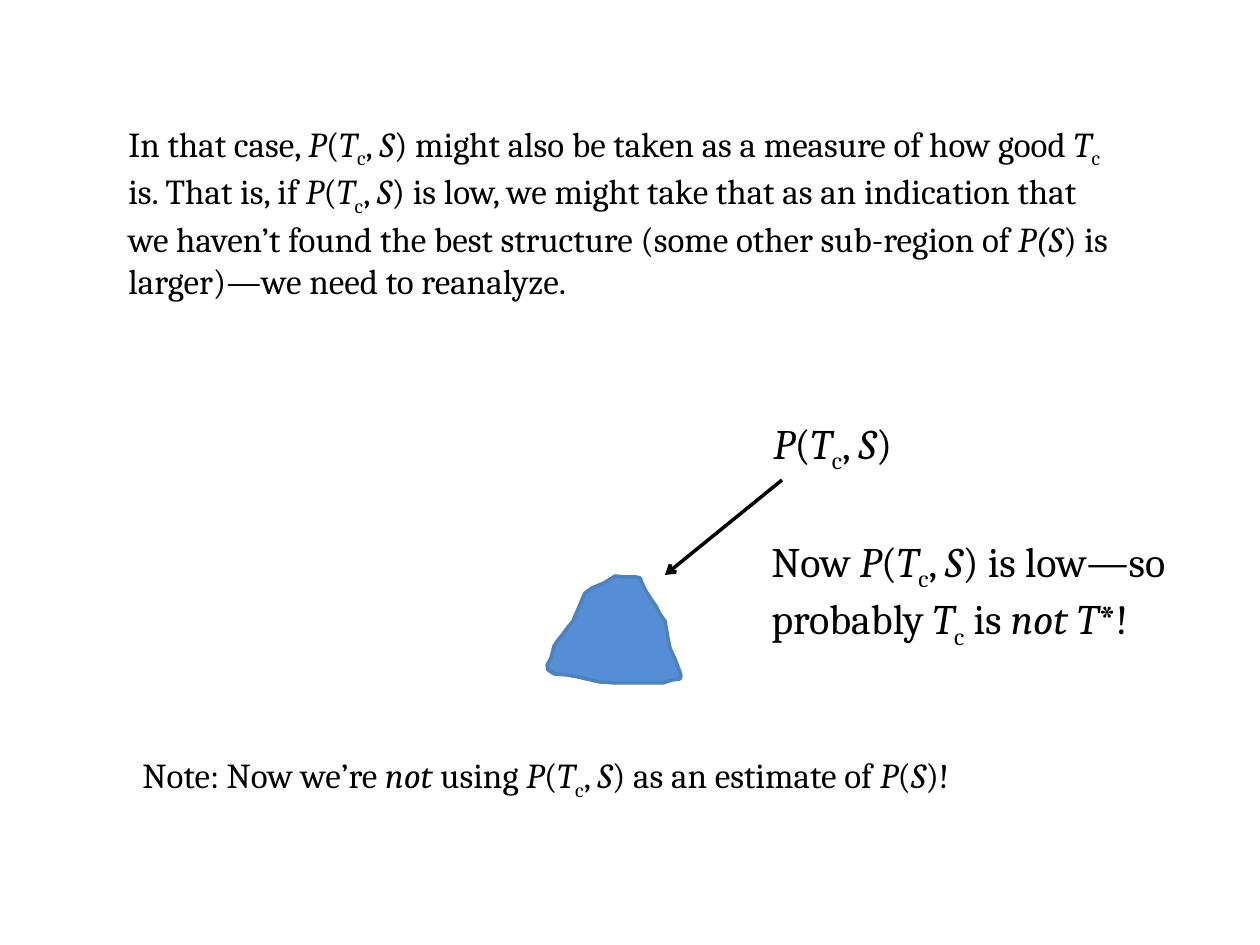
from dataclasses import dataclass

from lxml import etree
from pptx import Presentation
from pptx.dml.color import RGBColor
from pptx.enum.shapes import MSO_CONNECTOR
from pptx.enum.text import MSO_AUTO_SIZE
from pptx.oxml.ns import qn
from pptx.util import Emu, Inches, Pt

STRAIGHT = MSO_CONNECTOR.STRAIGHT
GROW = MSO_AUTO_SIZE.SHAPE_TO_FIT_TEXT
SCALE = 914400 / 126  # EMU in one px
FONT = "Cambria"
BLACK, BLUE, EDGE = "000000", "558ED5", "4F81BD"

# In the texts, ~ switches italics and _ switches subscript
TC = "~T~_c_"
JOINT = f"~P~({TC}, ~S~)"


@dataclass
class Note:
    left: int
    top: int
    width: int
    height: int
    size: int
    wrap: bool
    lines: list[str]


NOTES = [
    Note(116, 116, 1018, 183, 20, True, [
        f"In that case, {JOINT} might also be taken as a measure of how good {TC} is. "
        f"That is, if {JOINT} is low, we might take that as an indication that "
        "we haven’t found the best structure (some other sub-region of ~P(S~) is "
        "larger)—we need to reanalyze."]),
    Note(759, 529, 452, 115, 24, False, [
        f"Now {JOINT} is low—so", f"probably {TC} is ~not T~*!"]),
    Note(761, 411, 171, 63, 24, False, [JOINT]),
    Note(130, 747, 1012, 55, 20, True, [
        f"Note: Now we’re ~not~ using {JOINT} as an estimate of ~P~(~S~)!"]),
]

# Outline of the region, in px
REGION = [
    (615, 576), (612, 578), (604, 583), (592, 588), (585, 593), (581, 602),
    (573, 621), (568, 627), (563, 634), (558, 640), (554, 646), (551, 658),
    (547, 665), (548, 670), (554, 674), (567, 675), (578, 677), (591, 680),
    (600, 682), (616, 683), (663, 683), (672, 680), (680, 679), (681, 676),
    (680, 672), (675, 659), (670, 648), (668, 638), (667, 632), (665, 621),
    (660, 614), (656, 606), (653, 602), (646, 591), (643, 585), (640, 578),
    (636, 577), (625, 577),
]


def px(count: int) -> Emu:
    return Emu(round(count * SCALE))


def color(code: str) -> RGBColor:
    return RGBColor.from_string(code)


def add_runs(para, text: str) -> None:
    for i, part in enumerate(text.split("~")):
        for j, bit in enumerate(part.split("_")):
            if not bit:
                continue
            run = para.add_run()
            run.text = bit
            if i % 2:
                run.font.italic = True
            if j % 2:
                run._r.get_or_add_rPr().set("baseline", "-25000")


def add_note(slide, note: Note) -> None:
    box = slide.shapes.add_textbox(
        px(note.left), px(note.top), px(note.width), px(note.height))
    frame = box.text_frame
    frame.word_wrap = note.wrap
    frame.auto_size = GROW
    for i, line in enumerate(note.lines):
        para = frame.add_paragraph() if i else frame.paragraphs[0]
        para.font.name = FONT
        para.font.size = Pt(note.size)
        para.font.color.rgb = color(BLACK)
        add_runs(para, line)


def add_region(slide, points: list[tuple[int, int]]) -> None:
    form = slide.shapes.build_freeform(*points[0], scale=SCALE)
    form.add_line_segments(points[1:], close=True)
    shape = form.convert_to_shape()
    shape.shadow.inherit = False
    shape.fill.solid()
    shape.fill.fore_color.rgb = color(BLUE)
    shape.line.color.rgb = color(EDGE)
    shape.line.width = Pt(2)
    etree.SubElement(shape.line._get_or_add_ln(), qn("a:round"))


def add_arrow(slide, start: tuple[int, int], end: tuple[int, int]) -> None:
    arrow = slide.shapes.add_connector(STRAIGHT, *map(px, start + end))
    arrow.line.color.rgb = color(BLACK)
    arrow.line.width = Pt(2)
    etree.SubElement(arrow.line._get_or_add_ln(), qn("a:tailEnd"), type="arrow")
    etree.SubElement(arrow._element.spPr, qn("a:effectLst"))


def main() -> None:
    deck = Presentation()
    deck.slide_width, deck.slide_height = Inches(10), Inches(7.5)
    slide = deck.slides.add_slide(deck.slide_layouts[6])

    # Region and its pointer
    add_region(slide, REGION)
    add_arrow(slide, (782, 480), (665, 575))

    # Texts
    for note in NOTES:
        add_note(slide, note)

    deck.save("out.pptx")


if __name__ == "__main__":
    main()
